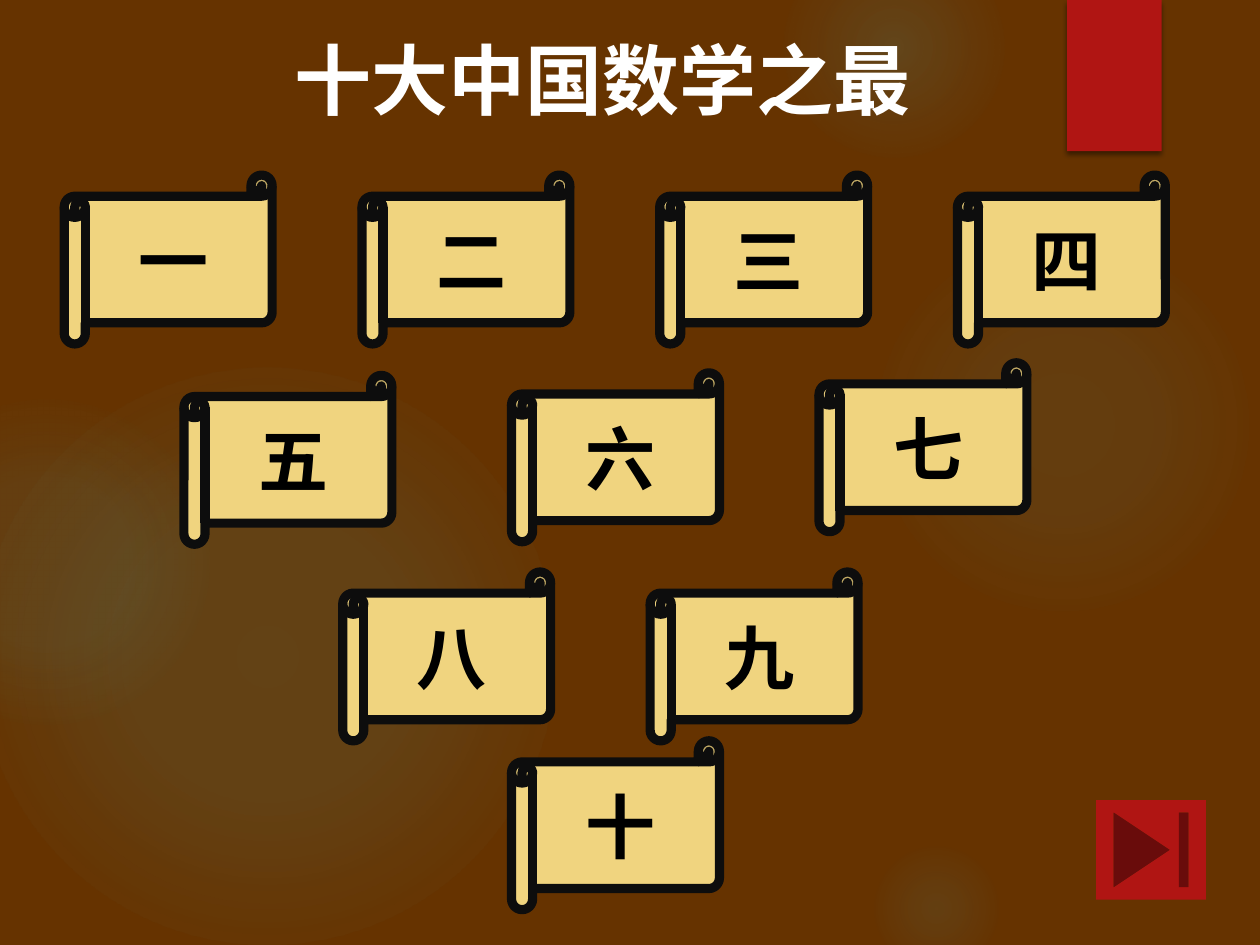
from lxml.etree import SubElement
from pptx import Presentation
from pptx.dml.color import RGBColor
from pptx.enum.shapes import MSO_SHAPE
from pptx.enum.text import MSO_ANCHOR, MSO_AUTO_SIZE, PP_ALIGN
from pptx.oxml.ns import qn
from pptx.util import Inches, Pt

COLORS = {
    "background": "663300",
    "glow": "50B9C1",
    "accent": "B01513",
    "paper": "F0D47F",
    "ink": "0D0D0D",
    "numeral": "000000",
    "title": "FFFFFF",
}
CJK_FONT = "Noto Sans CJK SC"

# Box, then (position %, opacity %) of each gradient stop
GLOWS = [
    ((6.89, 1.83, 3.08, 3.08), [(0, 7), (36, 6), (69, 0)]),
    ((6.22, -0.5, 1.75, 1.75), [(0, 14), (36, 7), (73, 0)]),
    ((6.89, 6.67, 1.08, 1.08), [(0, 9), (36, 5), (66, 0)]),
    ((-0.17, 2.92, 4.58, 4.58), [(0, 11), (36, 10), (75, 0)]),
    ((-0.92, 3.17, 2.58, 2.58), [(0, 8), (36, 8), (72, 0)]),
]
SCROLL_SIZE = (1.65, 1.34)
# Numerals of a row, then left and top of each scroll
SCROLL_ROWS = [
    ("一二三四", [(0.51 + 2.363 * i, 1.39) for i in range(4)]),
    ("五六七", [(1.46, 2.98), (4.06, 2.96), (6.5, 2.88)]),
    ("八九", [(2.72, 4.54), (5.16, 4.54)]),
    ("十", [(4.06, 5.88)]),
]


def rgb(name):
    return RGBColor.from_string(COLORS[name])


def add_plain_shape(page, kind, box, color=None):
    """Add a preset shape without outline or shadow."""
    shape = page.shapes.add_shape(kind, *map(Inches, box))
    shape.shadow.inherit = False
    shape.line.fill.background()
    if color:
        shape.fill.solid()
        shape.fill.fore_color.rgb = rgb(color)
    else:
        shape.fill.background()
    return shape


def add_span(para, text, font_name, size, color):
    span = para.add_run()
    span.text = text
    for name, value in {"name": font_name, "size": Pt(size), "bold": True}.items():
        setattr(span.font, name, value)
    span.font.color.rgb = rgb(color)
    SubElement(span.font._element, qn("a:ea"), typeface=CJK_FONT)


def add_color(parent, color, opacity):
    element = SubElement(parent, qn("a:srgbClr"), val=COLORS[color])
    SubElement(element, qn("a:alpha"), val=str(opacity * 1000))


def add_glow(page, box, stops):
    shape = add_plain_shape(page, MSO_SHAPE.OVAL, box)
    properties = shape._element.spPr
    gradient = SubElement(properties, qn("a:gradFill"), rotWithShape="1")
    properties.replace(properties.find(qn("a:noFill")), gradient)
    stop_list = SubElement(gradient, qn("a:gsLst"))
    for position, opacity in stops:
        stop = SubElement(stop_list, qn("a:gs"), pos=str(position * 1000))
        add_color(stop, "glow", opacity)
    circle = SubElement(gradient, qn("a:path"), path="circle")
    SubElement(circle, qn("a:fillToRect"), l="50000", t="50000", r="50000", b="50000")


def add_ribbon(page, box):
    shape = add_plain_shape(page, MSO_SHAPE.RECTANGLE, box, "accent")
    effects = shape._element.spPr.find(qn("a:effectLst"))
    shadow = SubElement(effects, qn("a:outerShdw"), blurRad=str(Pt(3)),
                        dist=str(Pt(2)), dir="5400000", rotWithShape="0")
    add_color(shadow, "numeral", 45)


def add_scroll(page, box, numeral):
    shape = add_plain_shape(page, MSO_SHAPE.HORIZONTAL_SCROLL, box, "paper")
    shape.line.color.rgb = rgb("ink")
    shape.line.width = Pt(5.25)
    frame = shape.text_frame
    frame.vertical_anchor = MSO_ANCHOR.MIDDLE
    para = frame.paragraphs[0]
    para.alignment = PP_ALIGN.CENTER
    add_span(para, numeral, CJK_FONT, 40, "numeral")


def add_title(page, box, text):
    frame = page.shapes.add_textbox(*map(Inches, box)).text_frame
    frame.word_wrap = False
    frame.auto_size = MSO_AUTO_SIZE.SHAPE_TO_FIT_TEXT
    add_span(frame.paragraphs[0], text, "Calibri", 44, "title")


def main():
    deck = Presentation()
    deck.slide_width, deck.slide_height = Inches(10), Inches(7.5)
    page = deck.slides.add_slide(deck.slide_layouts[6])
    page.background.fill.solid()
    page.background.fill.fore_color.rgb = rgb("background")

    for box, stops in GLOWS:
        add_glow(page, box, stops)
    add_ribbon(page, (8.47, 0, 0.75, 1.2))
    for numerals, corners in reversed(SCROLL_ROWS):
        for numeral, corner in zip(numerals, corners):
            add_scroll(page, corner + SCROLL_SIZE, numeral)
    add_title(page, (2.24, 0.21, 5.1, 0.83), "十大中国数学之最")
    add_plain_shape(page, MSO_SHAPE.ACTION_BUTTON_END, (8.7, 6.35, 0.87, 0.79), "accent")
    deck.save("out.pptx")


if __name__ == "__main__":
    main()
